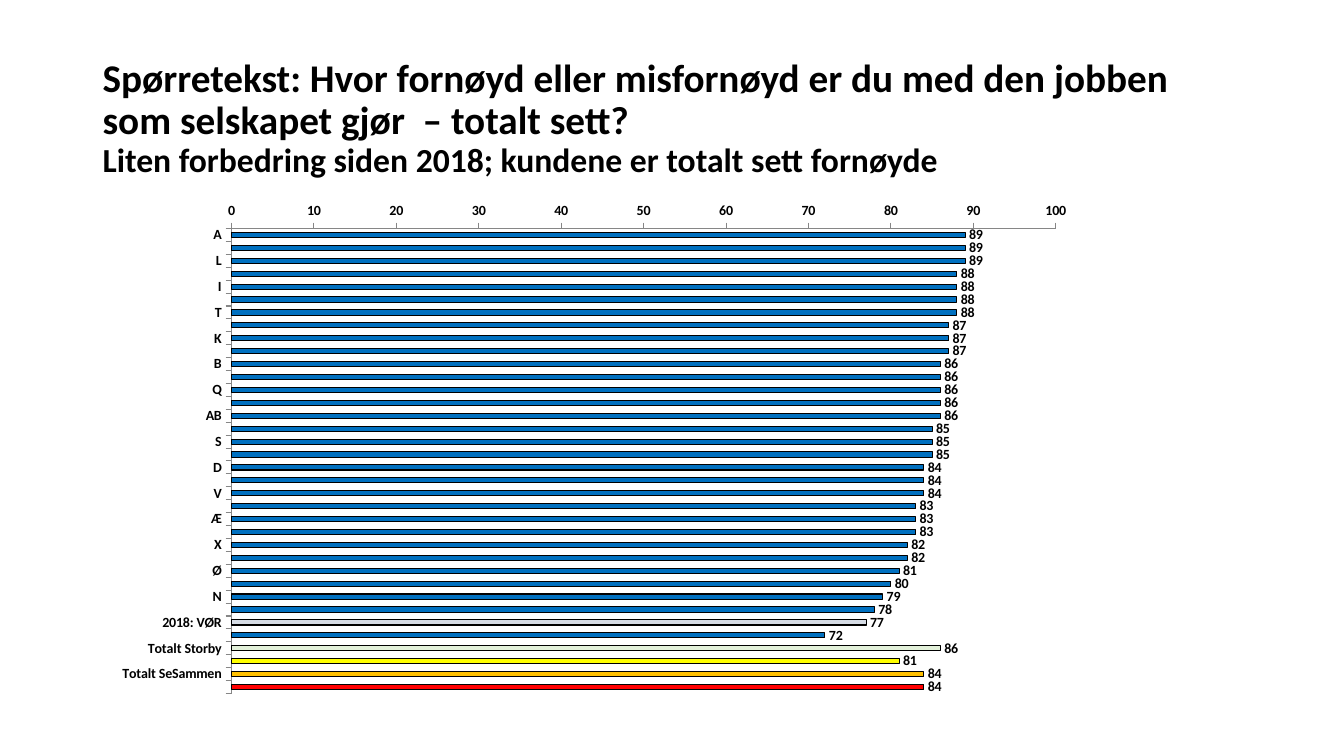
from dataclasses import dataclass

from lxml import etree
from pptx import Presentation
from pptx import util as u
from pptx.chart import data as cdata
from pptx.dml.color import RGBColor
from pptx.enum import chart as ce
from pptx.enum import text as te
from pptx.oxml.ns import qn

WIDE, HIGH = 13.33, 7.5
FONT = "Calibri"
BLACK, BLUE, GREY = "000000", "0070C0", "868686"


@dataclass(frozen=True)
class Box:
    """Place and size as shares of the slide."""
    x: float
    y: float
    w: float
    h: float

    def area(self) -> tuple:
        return (u.Inches(self.x * WIDE), u.Inches(self.y * HIGH),
                u.Inches(self.w * WIDE), u.Inches(self.h * HIGH))


@dataclass(frozen=True)
class Line:
    words: str
    size: int


@dataclass(frozen=True)
class Bar:
    name: str
    score: int
    fill: str = BLUE


HEAD = Box(0.069, 0.061, 0.863, 0.193)
PLOT = Box(0.091, 0.255, 0.716, 0.676)

LINES = [
    Line("Spørretekst: Hvor fornøyd eller misfornøyd er du med den jobben "
         "som selskapet gjør  – totalt sett? ", 28),
    Line("Liten forbedring siden 2018; kundene er totalt sett fornøyde", 24),
]

# Companies by score, best first
RANKS = {
    89: "A H L", 88: "E I M T", 87: "J K W", 86: "B F Q Z AB", 85: "R S U",
    84: "D G V", 83: "P Æ AA", 82: "X Å", 81: "Ø", 80: "C", 79: "N",
}
BARS = [Bar(name, score) for score, names in RANKS.items()
        for name in names.split()]
BARS += [
    Bar("2020: VØR", 78),
    Bar("2018: VØR", 77, "D6DCE5"),
    Bar("Y", 72),
    Bar("Totalt Storby", 86, "E2F0D9"),
    Bar("Totalt Innsikt", 81, "FFFF00"),
    Bar("Totalt SeSammen", 84, "FFC000"),
    Bar("Totalt RBM20", 84, "FF0000"),
]


def tint(code: str) -> RGBColor:
    return RGBColor.from_string(code)


def assign(item, **values) -> None:
    for key, value in values.items():
        setattr(item, key, value)


def style(font, size: int) -> None:
    assign(font, name=FONT, size=u.Pt(size), bold=True)
    font.color.rgb = tint(BLACK)


def paint(part, fill: str) -> None:
    part.format.fill.solid()
    part.format.fill.fore_color.rgb = tint(fill)
    part.format.line.color.rgb = tint(BLACK)
    part.format.line.width = u.Pt(0.75)


def draw_head(slide, box: Box, lines: list[Line]) -> None:
    frame = slide.shapes.add_textbox(*box.area()).text_frame
    assign(frame, word_wrap=True, vertical_anchor=te.MSO_ANCHOR.MIDDLE)
    para = frame.paragraphs[0]
    para.line_spacing = 0.9
    for index, line in enumerate(lines):
        if index:
            para.add_line_break()
        run = para.add_run()
        run.text = line.words
        style(run.font, line.size)


def place_plot(chart, **shares: float) -> None:
    """Fix the inner plot area as shares of the chart."""
    area = chart._chartSpace.find(".//" + qn("c:plotArea"))
    for old in area.findall(qn("c:layout")):
        area.remove(old)
    layout = etree.Element(qn("c:layout"))
    area.insert(0, layout)
    manual = etree.SubElement(layout, qn("c:manualLayout"))
    rules = {"layoutTarget": "inner", "xMode": "edge", "yMode": "edge"}
    for tag, value in (rules | shares).items():
        etree.SubElement(manual, qn("c:" + tag)).set("val", str(value))


def draw_bars(slide, box: Box, bars: list[Bar]) -> None:
    data = cdata.CategoryChartData(number_format="0")
    data.categories = [bar.name for bar in bars]
    data.add_series("Series 1", [bar.score for bar in bars])
    kind = ce.XL_CHART_TYPE.BAR_CLUSTERED
    chart = slide.shapes.add_chart(kind, *box.area(), data).chart
    assign(chart, has_legend=False, has_title=False)
    style(chart.font, 10)
    place_plot(chart, x=0.11, y=0.07, w=0.86, h=0.91)

    # Axes
    for axis in (chart.category_axis, chart.value_axis):
        assign(axis, has_major_gridlines=False,
               major_tick_mark=ce.XL_TICK_MARK.OUTSIDE,
               minor_tick_mark=ce.XL_TICK_MARK.NONE)
        axis.format.line.color.rgb = tint(GREY)
        style(axis.tick_labels.font, 10)
    chart.category_axis.reverse_order = True
    assign(chart.value_axis, minimum_scale=0, maximum_scale=100, major_unit=10)

    # Bars and their values
    plot = chart.plots[0]
    assign(plot, gap_width=150, vary_by_categories=False)
    series = plot.series[0]
    series.invert_if_negative = False
    paint(series, BLUE)
    for index, bar in enumerate(bars):
        if bar.fill != BLUE:
            paint(series.points[index], bar.fill)
    labels = series.data_labels
    assign(labels, show_value=True,
           position=ce.XL_LABEL_POSITION.OUTSIDE_END)
    style(labels.font, 10)


def main() -> None:
    deck = Presentation()
    assign(deck, slide_width=u.Inches(WIDE), slide_height=u.Inches(HIGH))
    slide = deck.slides.add_slide(deck.slide_layouts[6])
    draw_head(slide, HEAD, LINES)
    draw_bars(slide, PLOT, BARS)
    deck.save("out.pptx")


if __name__ == "__main__":
    main()
